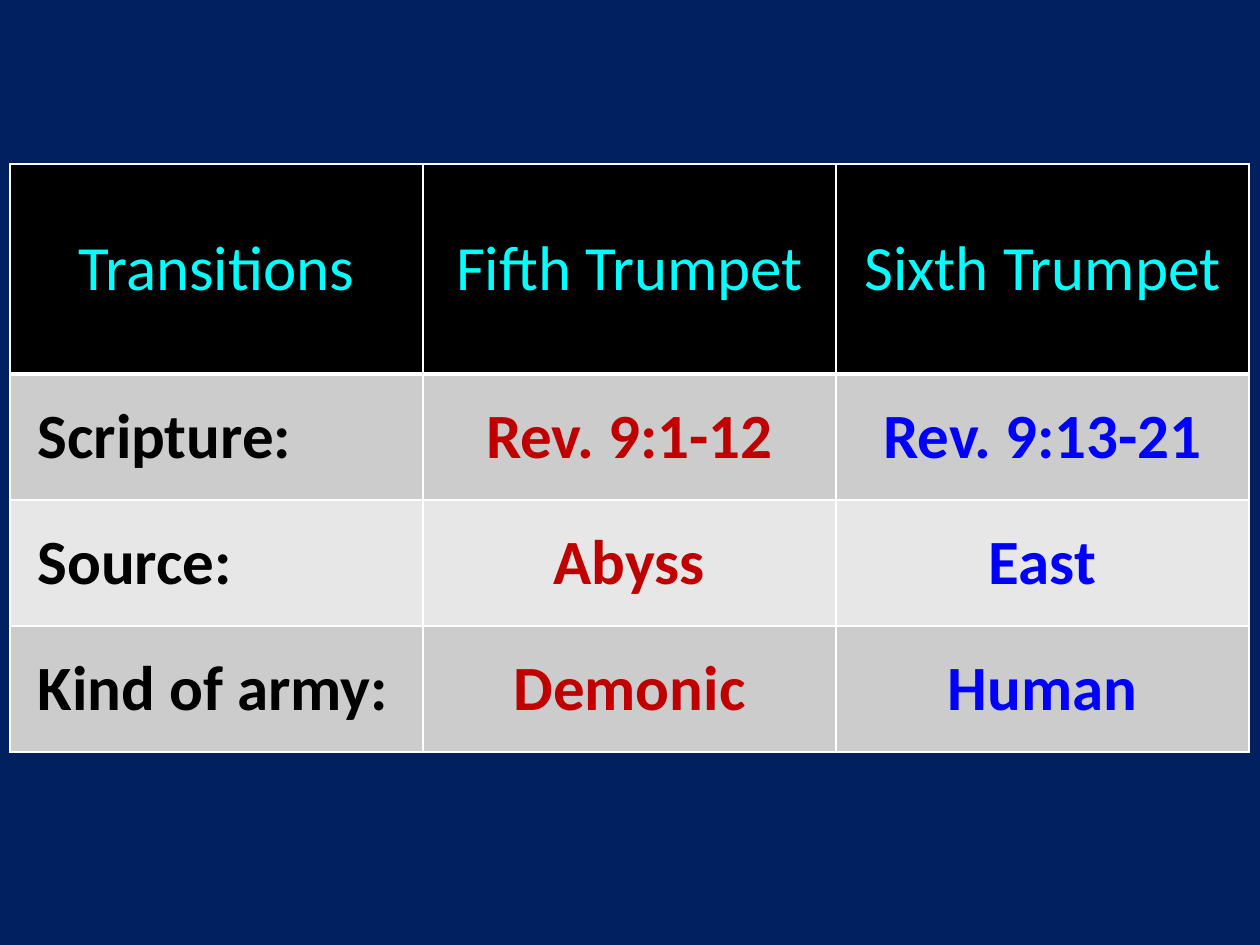
from lxml.etree import SubElement
from pptx import Presentation
from pptx.dml.color import RGBColor
from pptx.enum.text import MSO_ANCHOR as Anchor, PP_ALIGN as Align
from pptx.oxml.ns import qn
from pptx.util import Emu, Pt

PX = 914400 // 126  # EMU in one pixel
COLORS = {
    "background": "002060",
    "header": "000000",
    "heading": "00FFFF",
    "label": "000000",
    "fifth": "C00000",
    "sixth": "0000FF",
    "dark_band": "CCCCCC",
    "light_band": "E7E7E7",
    "border": "FFFFFF",
}
ROWS = [
    ("Transitions", "Fifth Trumpet", "Sixth Trumpet"),
    ("Scripture:", "Rev. 9:1-12", "Rev. 9:13-21"),
    ("Source:", "Abyss", "East"),
    ("Kind of army:", "Demonic", "Human"),
]
COLUMN_COLORS = ("label", "fifth", "sixth")
TABLE_LEFT, TABLE_TOP = 10, 164
COLUMN_WIDTH, HEADER_HEIGHT, ROW_HEIGHT = 413, 210, 126
LABEL_INDENT = 15


def px(length):
    return Emu(length * PX)


def rgb(name):
    return RGBColor.from_string(COLORS[name])


def write_text(frame, text, color, size=36, bold=True, align=Align.CENTER, indent=0):
    para = frame.paragraphs[0]
    para.alignment = align
    if indent:
        para._p.get_or_add_pPr().set("marL", str(px(indent)))
    span = para.add_run()
    span.text = text
    span.font.name = "Calibri"
    span.font.size = Pt(size)
    span.font.bold = bold
    span.font.color.rgb = rgb(color)


def add_borders(cell, top=1, bottom=1):
    properties = cell._tc.get_or_add_tcPr()
    for side, width in (("L", 1), ("R", 1), ("T", top), ("B", bottom)):
        line = SubElement(properties, qn(f"a:ln{side}"), w=str(Pt(width)))
        fill = SubElement(line, qn("a:solidFill"))
        SubElement(fill, qn("a:srgbClr"), val=COLORS["border"])


def format_cell(cell, fill, top=1, bottom=1):
    add_borders(cell, top, bottom)
    cell.fill.solid()
    cell.fill.fore_color.rgb = rgb(fill)
    cell.vertical_anchor = Anchor.MIDDLE


def add_trumpet_table(page):
    columns, rows = len(ROWS[0]), len(ROWS)
    height = HEADER_HEIGHT + (rows - 1) * ROW_HEIGHT
    table = page.shapes.add_table(
        rows, columns, px(TABLE_LEFT), px(TABLE_TOP),
        px(columns * COLUMN_WIDTH), px(height)).table
    for column in table.columns:
        column.width = px(COLUMN_WIDTH)
    for index, row in enumerate(table.rows):
        row.height = px(ROW_HEIGHT if index else HEADER_HEIGHT)

    # Header row, with a thick rule below it
    for column, text in enumerate(ROWS[0]):
        cell = table.cell(0, column)
        format_cell(cell, "header", bottom=3)
        write_text(cell.text_frame, text, "heading", bold=False)

    # Banded body rows: label on the left, one colour for each trumpet
    for row, texts in enumerate(ROWS[1:], start=1):
        band = "dark_band" if row % 2 else "light_band"
        for column, text in enumerate(texts):
            cell = table.cell(row, column)
            format_cell(cell, band, top=3 if row == 1 else 1)
            is_label = column == 0
            write_text(cell.text_frame, text, COLUMN_COLORS[column],
                       align=Align.LEFT if is_label else Align.CENTER,
                       indent=LABEL_INDENT if is_label else 0)


def main():
    deck = Presentation()
    deck.slide_width, deck.slide_height = px(1260), px(945)
    page = deck.slides.add_slide(deck.slide_layouts[6])
    page.background.fill.solid()
    page.background.fill.fore_color.rgb = rgb("background")
    add_trumpet_table(page)
    deck.save("out.pptx")


if __name__ == "__main__":
    main()
